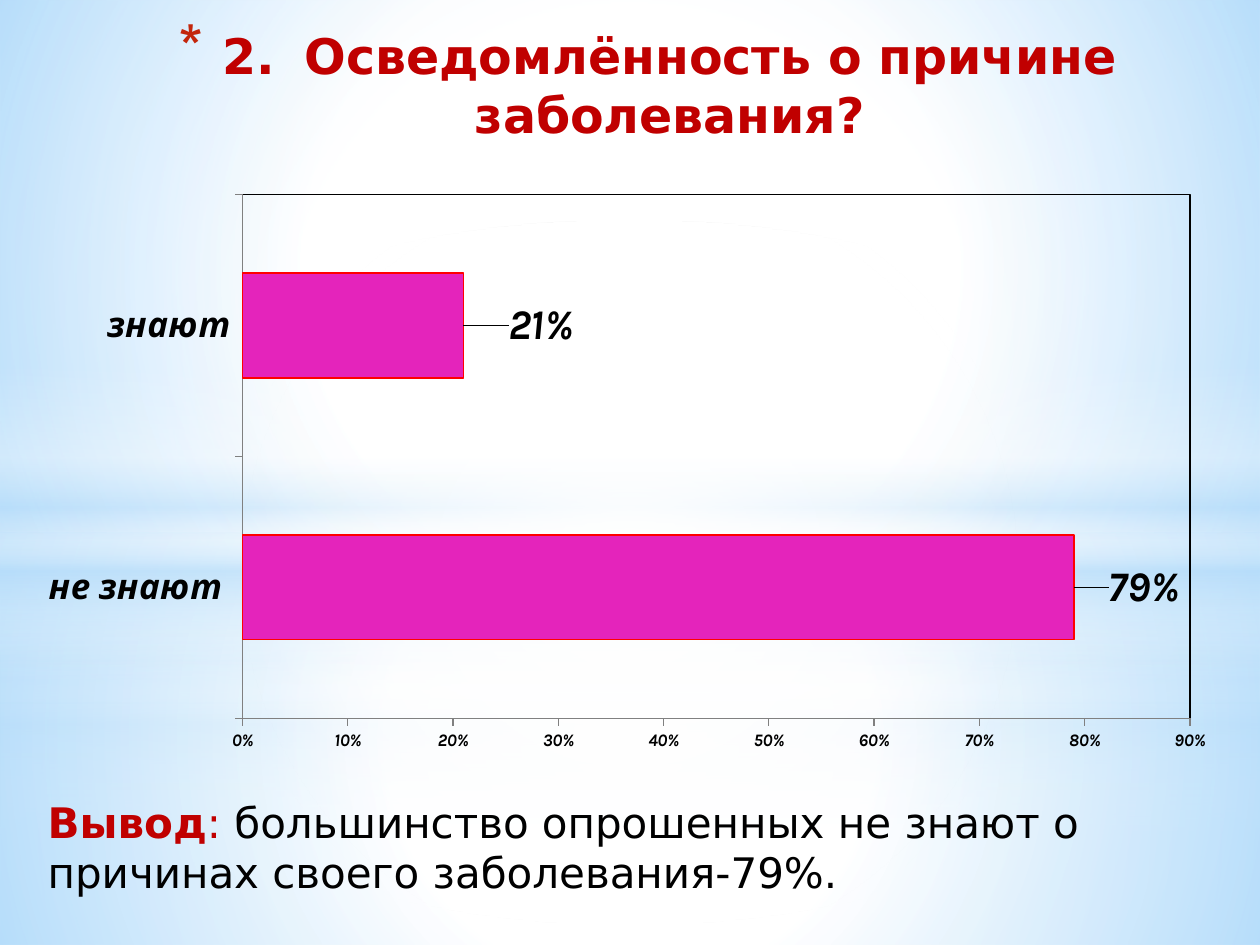
import pptx
import pptx.chart.data
import pptx.dml.color
import pptx.enum.chart
import pptx.enum.shapes
import pptx.enum.text
import pptx.oxml
import pptx.oxml.ns
import pptx.util

WIDE, HIGH = 10, 7.5
FONT, CHART_FONT = "DejaVu Sans", "Karla"
WHITE, SKY, RED, BLACK, GRAY = "FFFFFF", "B4DCFA", "C00000", "000000", "808080"

TITLE = "2.\tОсведомлённость о причине заболевания?"
NOTE = [("Вывод", RED, True), (": ", RED, False),
        ("большинство опрошенных не знают о причинах своего заболевания-79%.", BLACK, False)]
# category, value, label shift as a share of the chart's width
BARS = [("не знают ", 0.79, 0.025), ("знают", 0.21, 0.033)]

# Each backdrop layer: split height, band top, opacity shift, end of the oval's glow
LAYERS = [(5.58, 4.12, 0, 56), (4.23, 2.9, 1, 54)]
BAND = [(0, WHITE, 0), (29, WHITE, 30), (45, SKY, 40), (55, WHITE, 26),
        (65, SKY, 60), (100, WHITE, 0)]

NS = pptx.oxml.ns.nsdecls
KIND = pptx.enum.shapes.MSO_SHAPE
XL = pptx.enum.chart
inch = pptx.util.Inches


def color(code):
    return pptx.dml.color.RGBColor.from_string(code)


def style(font, name, size, code, bold, slant=False):
    font.name, font.size, font.bold, font.italic = name, pptx.util.Pt(size), bold, slant
    font.color.rgb = color(code)


def glow(slide, kind, top, high, stops, round_fill=True):
    """Full-width shape with a see-through gradient; stops are (place, color, opacity)."""
    shape = slide.shapes.add_shape(kind, 0, inch(top), inch(WIDE), inch(high))
    shape.shadow.inherit = False
    shape.line.fill.background()
    shape.fill.background()
    marks = "".join(
        f'<a:gs pos="{pos * 1000}"><a:srgbClr val="{code}"><a:alpha val="{alpha * 1000}"/>'
        "</a:srgbClr></a:gs>" for pos, code, alpha in stops)
    way = ('<a:path path="circle"><a:fillToRect l="50000" t="50000" r="50000" b="50000"/></a:path>'
           if round_fill else '<a:lin ang="5400000" scaled="0"/>')
    grad = pptx.oxml.parse_xml(
        f'<a:gradFill {NS("a")} rotWithShape="1"><a:gsLst>{marks}</a:gsLst>{way}</a:gradFill>')
    old = shape._element.spPr.find(pptx.oxml.ns.qn("a:noFill"))
    old.getparent().replace(old, grad)


def text_box(slide, left, top, wide, high):
    frame = slide.shapes.add_textbox(inch(left), inch(top), inch(wide), inch(high)).text_frame
    frame.word_wrap = True
    return frame


def layout(**parts):
    inner = "".join(f'<c:{key} val="{val}"/>' for key, val in parts.items())
    return pptx.oxml.parse_xml(
        f'<c:layout {NS("c")}><c:manualLayout>{inner}</c:manualLayout></c:layout>')


def backdrop(slide):
    slide.background.fill.solid()
    slide.background.fill.fore_color.rgb = color(WHITE)
    for split, band, more, end in LAYERS:
        low = [(0, WHITE, 91 + more), (37, WHITE, 76 + more), (100, SKY, 79 + more)]
        high = [(0, WHITE, 89 + more), (48, WHITE, 62 + more), (100, SKY, 79 + more)]
        glow(slide, KIND.RECTANGLE, split, HIGH - split, low)
        glow(slide, KIND.RECTANGLE, 0, split, high)
        glow(slide, KIND.RECTANGLE, band, 2.5, BAND, False)
        glow(slide, KIND.OVAL, 1.75, 5.58, [(0, WHITE, 100), (end, WHITE, 0)])


def heading(slide):
    frame = text_box(slide, 0.28, 0.36, 9.72, 1.57)
    frame.vertical_anchor = pptx.enum.text.MSO_ANCHOR.BOTTOM
    frame.margin_bottom = inch(0.79)
    para = frame.paragraphs[0]
    para.text = TITLE
    para.alignment = pptx.enum.text.PP_ALIGN.CENTER
    props = para._p.get_or_add_pPr()
    props.set("marL", str(inch(0.35)))
    props.set("indent", str(inch(-0.35)))
    for bullet in ('buClr {}><a:srgbClr val="C3260C"/></a:buClr>', 'buSzPct {} val="128000"/>',
                   'buChar {} char="*"/>'):
        props.append(pptx.oxml.parse_xml("<a:" + bullet.format(NS("a"))))
    style(para.runs[0].font, FONT, 28, RED, True)


def bar_chart(slide):
    data = pptx.chart.data.CategoryChartData(number_format="0%")
    data.categories = [bar[0] for bar in BARS]
    data.add_series("Series 1", [bar[1] for bar in BARS])
    chart = slide.shapes.add_chart(XL.XL_CHART_TYPE.BAR_CLUSTERED, inch(0.2), inch(1.39),
                                   inch(9.53), inch(4.65), data).chart
    chart.has_legend = chart.has_title = False
    style(chart.font, CHART_FONT, 10, BLACK, True, True)

    # Axes
    for axis, size in ((chart.category_axis, 20), (chart.value_axis, 10)):
        axis.has_major_gridlines = False
        axis.major_tick_mark = XL.XL_TICK_MARK.OUTSIDE
        axis.format.line.color.rgb = color(GRAY)
        style(axis.tick_labels.font, CHART_FONT, size, BLACK, True, True)
    scale = chart.value_axis
    scale.minimum_scale, scale.maximum_scale, scale.major_unit = 0, 0.9, 0.1
    scale.tick_labels.number_format = "0%"
    scale.tick_labels.number_format_is_linked = False

    # Bars and their labels
    plot = chart.plots[0]
    plot.gap_width, plot.vary_by_categories = 150, False
    series = plot.series[0]
    series.format.fill.solid()
    series.format.fill.fore_color.rgb = color("E424BB")
    series.format.line.color.rgb = color("FF0000")
    series.format.line.width = pptx.util.Pt(1)
    labels = series.data_labels
    labels.show_value = True
    labels.number_format, labels.number_format_is_linked = "0%", False
    style(labels.font, CHART_FONT, 24, BLACK, True, True)
    for num, (_, _, shift) in enumerate(BARS):
        label = series.points[num].data_label
        style(label.font, CHART_FONT, 24, BLACK, True, True)
        label.position = XL.XL_LABEL_POSITION.OUTSIDE_END
        mark = series._element.xpath(f'c:dLbls/c:dLbl[c:idx/@val="{num}"]')[0]
        mark.insert(1, layout(x=shift, y=0))

    # Plot area: fixed place and a black frame
    area = chart._chartSpace.xpath("c:chart/c:plotArea")[0]
    for old in area.xpath("c:layout"):
        area.remove(old)
    area.insert(0, layout(layoutTarget="inner", xMode="edge", yMode="edge",
                          x=0.181, y=0.033, w=0.789, h=0.894))
    area.append(pptx.oxml.parse_xml(
        f'<c:spPr {NS("c", "a")}><a:noFill/><a:ln w="9525"><a:solidFill>'
        f'<a:srgbClr val="{BLACK}"/></a:solidFill></a:ln></c:spPr>'))


def summary(slide):
    para = text_box(slide, 0.28, 6.27, 9.53, 1.23).paragraphs[0]
    for words, code, bold in NOTE:
        run = para.add_run()
        run.text = words
        style(run.font, FONT, 24, code, bold)


def main():
    deck = pptx.Presentation()
    deck.slide_width, deck.slide_height = inch(WIDE), inch(HIGH)
    slide = deck.slides.add_slide(deck.slide_layouts[6])
    for part in (backdrop, heading, bar_chart, summary):
        part(slide)
    deck.save("out.pptx")


if __name__ == "__main__":
    main()
